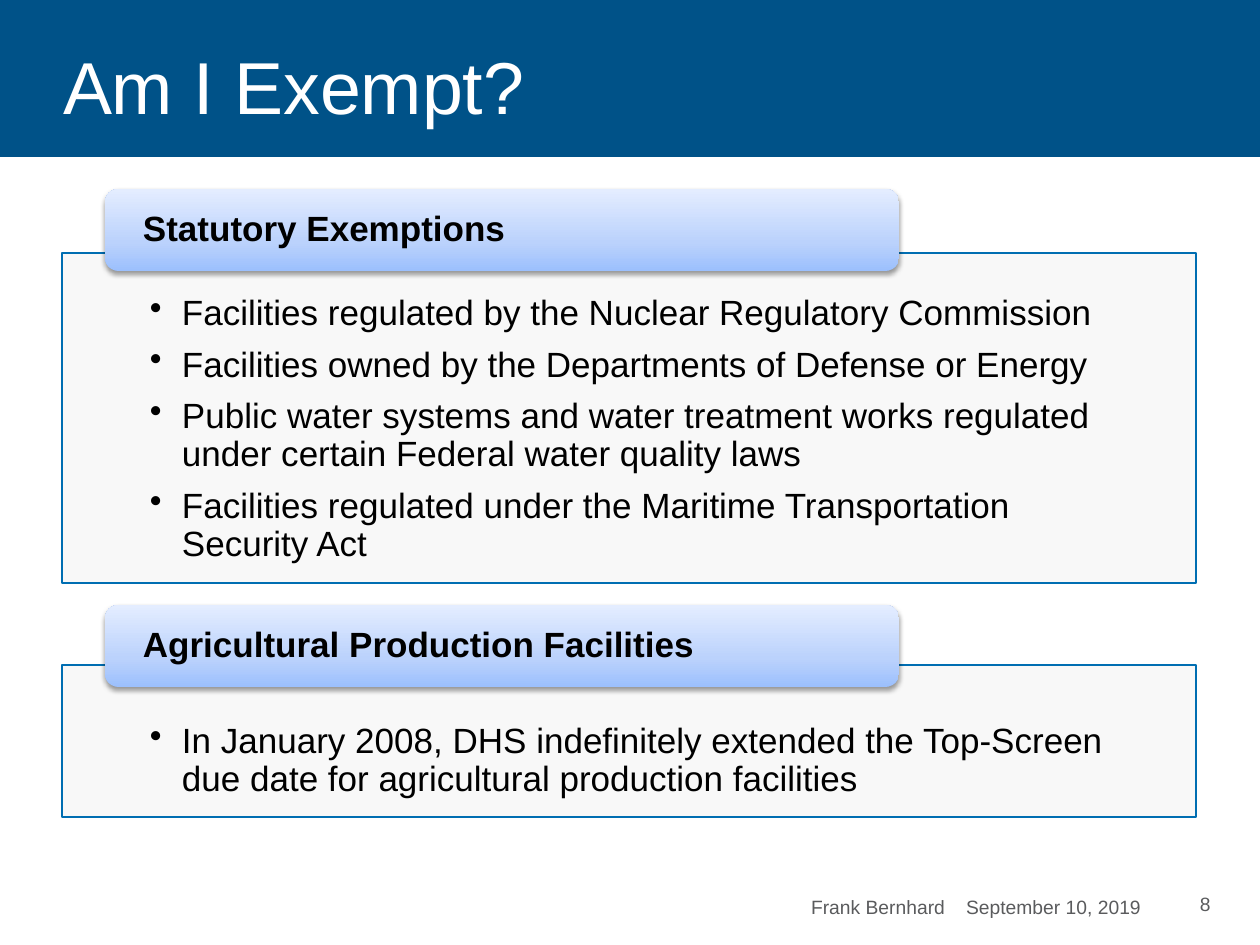
from lxml import etree
from pptx import Presentation
from pptx import util as u
from pptx.dml.color import RGBColor
from pptx.enum import shapes, text
from pptx.oxml import parse_xml
from pptx.oxml.ns import nsdecls, qn

# Content
TITLE = "Am I Exempt?"
FOOTER = "Frank Bernhard\tSeptember 10, 2019"
PAGE = "8"
SECTIONS = [
    {
        "heading": "Statutory Exemptions",
        "tab_top": 189, "panel_top": 253, "panel_height": 330, "text_inset": 42,
        "bullets": [
            "Facilities regulated by the Nuclear Regulatory Commission",
            "Facilities owned by the Departments of Defense or Energy",
            "Public water systems and water treatment works regulated "
            "under certain Federal water quality laws",
            "Facilities regulated under the Maritime Transportation Security Act",
        ],
    },
    {
        "heading": "Agricultural Production Facilities",
        "tab_top": 605, "panel_top": 665, "panel_height": 152, "text_inset": 58,
        "bullets": [
            "In January 2008, DHS indefinitely extended the Top-Screen "
            "due date for agricultural production facilities",
        ],
    },
]

# Format
FONT = "Arial"
BLUE = RGBColor(0x00, 0x52, 0x88)
EDGE = RGBColor(0x00, 0x6E, 0xB2)
PALE = RGBColor(0xF8, 0xF8, 0xF8)
GRAY = RGBColor(0x5A, 0x5B, 0x5D)
BLACK = RGBColor(0, 0, 0)
WHITE = RGBColor(0xFF, 0xFF, 0xFF)
TAB_STOPS = [(0, RGBColor(0x9C, 0xC0, 0xFD)), (35, RGBColor(0xBB, 0xD2, 0xFC)),
             (100, RGBColor(0xE4, 0xED, 0xFF))]
PANEL_LEFT, PANEL_WIDTH = 62, 1134
TAB_LEFT, TAB_WIDTH, TAB_HEIGHT = 105, 794, 82
INDENT = 32
TOP, MIDDLE, BOTTOM = (text.MSO_ANCHOR.TOP, text.MSO_ANCHOR.MIDDLE,
                       text.MSO_ANCHOR.BOTTOM)


def px(value):
    return u.Emu(round(value * 914400 / 126))


def set_attributes(target, values):
    for name, value in values.items():
        setattr(target, name, value)


def set_frame(shape, anchor, insets=(13, 6, 13, 6)):
    sides = ("margin_left", "margin_top", "margin_right", "margin_bottom")
    frame = shape.text_frame
    set_attributes(frame, {"word_wrap": True, "vertical_anchor": anchor,
                           "auto_size": text.MSO_AUTO_SIZE.NONE})
    set_attributes(frame, dict(zip(sides, map(px, insets))))
    return frame


def write(paragraph, words, size, color, bold=False, spacing=None):
    paragraph.text = words
    set_attributes(paragraph, {"alignment": text.PP_ALIGN.LEFT,
                               "line_spacing": spacing})
    set_attributes(paragraph.font, {"name": FONT, "size": u.Pt(size), "bold": bold})
    paragraph.font.color.rgb = color


def add_box(slide, kind, left, top, width, height):
    shape = slide.shapes.add_shape(kind, px(left), px(top), px(width), px(height))
    shape.shadow.inherit = False
    return shape


def add_bullet(paragraph):
    properties = paragraph._p.get_or_add_pPr()
    properties.set("marL", str(px(INDENT)))
    properties.set("indent", str(-px(INDENT)))
    etree.SubElement(properties, qn("a:buChar")).set("char", "•")


def add_panel(slide, section):
    panel = add_box(slide, shapes.MSO_SHAPE.RECTANGLE, PANEL_LEFT,
                    section["panel_top"], PANEL_WIDTH, section["panel_height"])
    panel.fill.solid()
    panel.fill.fore_color.rgb = PALE
    color = panel._element.spPr.find(qn("a:solidFill"))[0]
    etree.SubElement(color, qn("a:alpha")).set("val", "90000")
    panel.line.color.rgb = EDGE
    panel.line.width = u.Pt(0.75)
    frame = set_frame(panel, TOP, (88, section["text_inset"], 88, 20))
    for index, words in enumerate(section["bullets"]):
        paragraph = frame.add_paragraph() if index else frame.paragraphs[0]
        add_bullet(paragraph)
        write(paragraph, words, 20, BLACK, spacing=0.9)
        paragraph.space_after = u.Pt(8)


def add_heading_tab(slide, section):
    tab = add_box(slide, shapes.MSO_SHAPE.ROUNDED_RECTANGLE, TAB_LEFT,
                  section["tab_top"], TAB_WIDTH, TAB_HEIGHT)
    tab.line.fill.background()
    # Three-stop gradient running upward, and a soft shadow below
    stops = "".join(f'<a:gs pos="{pos * 1000}"><a:srgbClr val="{color}"/></a:gs>'
                    for pos, color in TAB_STOPS)
    properties = tab._element.spPr
    properties.find(qn("a:prstGeom")).addnext(parse_xml(
        f'<a:gradFill {nsdecls("a")} rotWithShape="1"><a:gsLst>{stops}</a:gsLst>'
        '<a:lin ang="16200000" scaled="0"/></a:gradFill>'))
    properties.find(qn("a:effectLst")).append(parse_xml(
        f'<a:outerShdw {nsdecls("a")} blurRad="{u.Pt(3.1)}" dist="{u.Pt(1.6)}" '
        'dir="5400000" rotWithShape="0"><a:srgbClr val="000000">'
        '<a:alpha val="38000"/></a:srgbClr></a:outerShdw>'))
    frame = set_frame(tab, MIDDLE, (34, 0, 34, 0))
    write(frame.paragraphs[0], section["heading"], 20, BLACK, True, 0.9)


def add_footer_text(slide, words, left, top, width, height, tab_stop=None):
    box = slide.shapes.add_textbox(px(left), px(top), px(width), px(height))
    paragraph = set_frame(box, BOTTOM).paragraphs[0]
    if tab_stop:
        stops = etree.SubElement(paragraph._p.get_or_add_pPr(), qn("a:tabLst"))
        stop = etree.SubElement(stops, qn("a:tab"))
        stop.set("pos", str(px(tab_stop)))
        stop.set("algn", "l")
    write(paragraph, words, 11, GRAY)


def main():
    presentation = Presentation()
    set_attributes(presentation, {"slide_width": px(1260), "slide_height": px(945)})
    slide = presentation.slides.add_slide(presentation.slide_layouts[5])

    # Title band
    title = slide.shapes.title
    set_attributes(title, {"left": px(0), "top": px(0),
                           "width": px(1260), "height": px(157)})
    title.fill.solid()
    title.fill.fore_color.rgb = BLUE
    frame = set_frame(title, MIDDLE, (63, 38, 13, 13))
    write(frame.paragraphs[0], TITLE, 42, WHITE, spacing=0.9)

    # Panels with their heading tabs
    for section in SECTIONS:
        add_panel(slide, section)
        add_heading_tab(slide, section)

    # Footer
    add_footer_text(slide, FOOTER, 798, 882, 482 - 20, 42, tab_stop=155)
    add_footer_text(slide, PAGE, 1187, 886, 63, 35)

    presentation.save("out.pptx")


if __name__ == "__main__":
    main()
